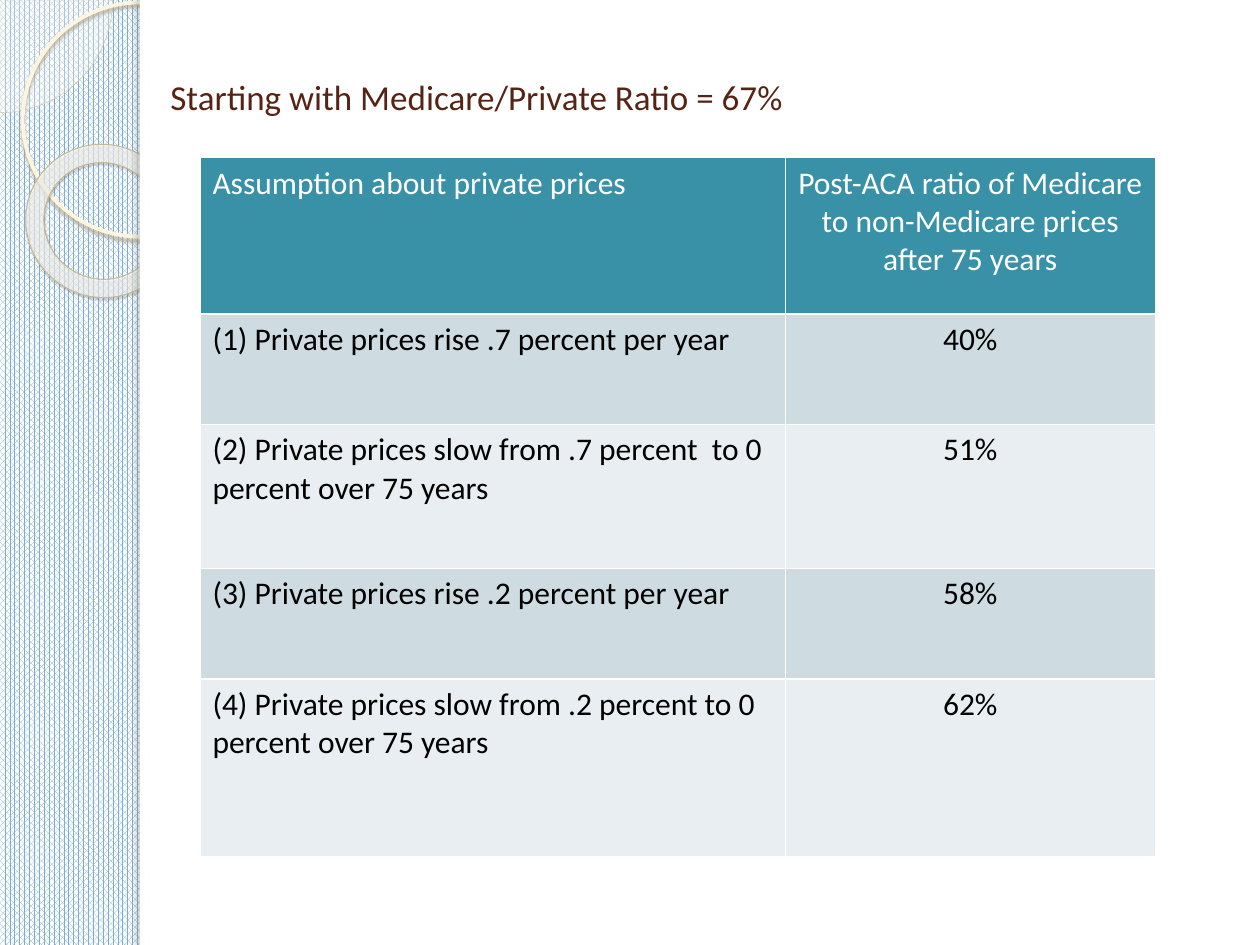
"""Build the slide on price assumptions and the Medicare to private price ratio."""
from lxml.etree import SubElement
from pptx import Presentation
from pptx.dml.color import RGBColor
from pptx.enum.dml import MSO_PATTERN
from pptx.enum.shapes import MSO_SHAPE as Kind
from pptx.enum.text import MSO_ANCHOR, PP_ALIGN
from pptx.oxml import parse_xml
from pptx.oxml.ns import nsdecls, qn
from pptx.util import Cm, Pt


def rgb(code):
    return RGBColor.from_string(code)


def add_decor(kind, box, line=None, shadow=None):
    shape = slide.shapes.add_shape(kind, *(Cm(v) for v in box))
    shape.shadow.inherit = False
    if line:
        shape.line.color.rgb = rgb(line[0])
        shape.line.width = Pt(line[1])
    else:
        shape.line.fill.background()
    if shadow:
        color, alpha, blur, distance, angle = shadow
        effects = shape._element.spPr.find(qn("a:effectLst"))
        effects.append(parse_xml(
            f'<a:outerShdw {nsdecls("a")} blurRad="{Pt(blur)}" dist="{Pt(distance)}" '
            f'dir="{angle * 60000}" algn="tl" rotWithShape="0"><a:srgbClr val="{color}">'
            f'<a:alpha val="{alpha * 1000}"/></a:srgbClr></a:outerShdw>'))
    return shape


prs = Presentation()
prs.slide_width, prs.slide_height = Cm(25.4), Cm(19.05)
slide = prs.slides.add_slide(prs.slide_layouts[5])

backdrop = slide.background.fill
backdrop.patterned()
backdrop.pattern = MSO_PATTERN.PERCENT_75
backdrop.fore_color.rgb = rgb("7CADD6")
backdrop.back_color.rgb = rgb("FFFFFF")

quarter = add_decor(Kind.PIE, (-2.27, -2.27, 4.54, 4.54), ("D3C39F", 0.25))
quarter.adjustments[0] = 0
quarter.adjustments[1] = 54.02
quarter.fill.solid()
quarter.fill.fore_color.rgb = rgb("FEFAF4")
tint = quarter._element.spPr.find(qn("a:solidFill")).find(qn("a:srgbClr"))
SubElement(tint, qn("a:alpha"), val="33000")

circle = add_decor(Kind.OVAL, (0.46, 0.05, 4.72, 4.72), ("FFF5DE", 2.15),
                   ("B0A68F", 85, 2, 2, 90))
circle.fill.background()

ring = add_decor(Kind.DONUT, (0.51, 2.92, 3.12, 3.07), ("C7B893", 0.58),
                 ("5A5444", 35, 1, 1.2, 75))
ring.rotation = 38.6
ring.adjustments[0] = 0.12
stops = "".join(
    f'<a:gs pos="{place * 1000}"><a:srgbClr val="{color}"><a:alpha val="{alpha * 1000}"/>'
    "</a:srgbClr></a:gs>"
    for place, color, alpha in [(0, "FFFCF6", 70), (70, "FFFEFB", 55), (100, "F0D28E", 60)])
ring._element.spPr.find(qn("a:prstGeom")).addnext(parse_xml(
    f'<a:gradFill {nsdecls("a")} rotWithShape="1"><a:gsLst>{stops}</a:gsLst><a:path path="circle">'
    '<a:fillToRect l="-408000" t="-50000" r="508000" b="150000"/></a:path></a:gradFill>'))

page = add_decor(Kind.RECTANGLE, (2.82, 0, 22.58, 19.05))
page_edge = add_decor(Kind.RECTANGLE, (2.82, 0, 0.2, 19.05),
                      shadow=("736F63", 25, 3, 3, 180))
for panel in (page, page_edge):
    panel.fill.solid()
    panel.fill.fore_color.rgb = rgb("FFFFFF")

title = slide.shapes.title
slide.shapes._spTree.append(title._element)
title.left, title.top, title.width, title.height = Cm(3.18), Cm(0.84), Cm(22.22), Cm(2.21)
title.text_frame.text = "Starting with Medicare/Private Ratio = 67%"
title.text_frame.vertical_anchor = MSO_ANCHOR.MIDDLE
heading = title.text_frame.paragraphs[0]
heading.alignment = PP_ALIGN.LEFT
heading.font.name, heading.font.size = "Calibri", Pt(20)
heading.font.color.rgb = rgb("572314")

rows = [
    ("Assumption about private prices",
     "Post-ACA ratio of Medicare to non-Medicare prices after 75 years"),
    ("(1) Private prices rise .7 percent per year", "40%"),
    ("(2) Private prices slow from .7 percent  to 0 percent over 75 years", "51%"),
    ("(3) Private prices rise .2 percent per year", "58%"),
    ("(4) Private prices slow from .2 percent to 0 percent over 75 years", "62%"),
]
row_heights = [3.15, 2.23, 2.9, 2.23, 3.58]
ratios = slide.shapes.add_table(len(rows), 2, Cm(4.03), Cm(3.18), Cm(19.26),
                                Cm(sum(row_heights))).table
for column, width in zip(ratios.columns, (11.8, 7.46)):
    column.width = Cm(width)

for r, (texts, height) in enumerate(zip(rows, row_heights)):
    ratios.rows[r].height = Cm(height)
    band = "3891A7" if r == 0 else ("E8EEF1", "CEDCE1")[r % 2]
    for c, text in enumerate(texts):
        cell = ratios.cell(r, c)
        cell.text = text
        entry = cell.text_frame.paragraphs[0]
        entry.alignment = PP_ALIGN.CENTER if c else PP_ALIGN.LEFT
        entry.font.name, entry.font.size, entry.font.bold = "Calibri", Pt(18), False
        entry.font.color.rgb = rgb("000000" if r else "FFFFFF")
        for side in ("lnL", "lnR", "lnT", "lnB"):
            border = SubElement(cell._tc.get_or_add_tcPr(), qn(f"a:{side}"), w=str(Pt(1)))
            SubElement(SubElement(border, qn("a:solidFill")), qn("a:srgbClr"), val="FFFFFF")
        cell.fill.solid()
        cell.fill.fore_color.rgb = rgb(band)

prs.save("out.pptx")
